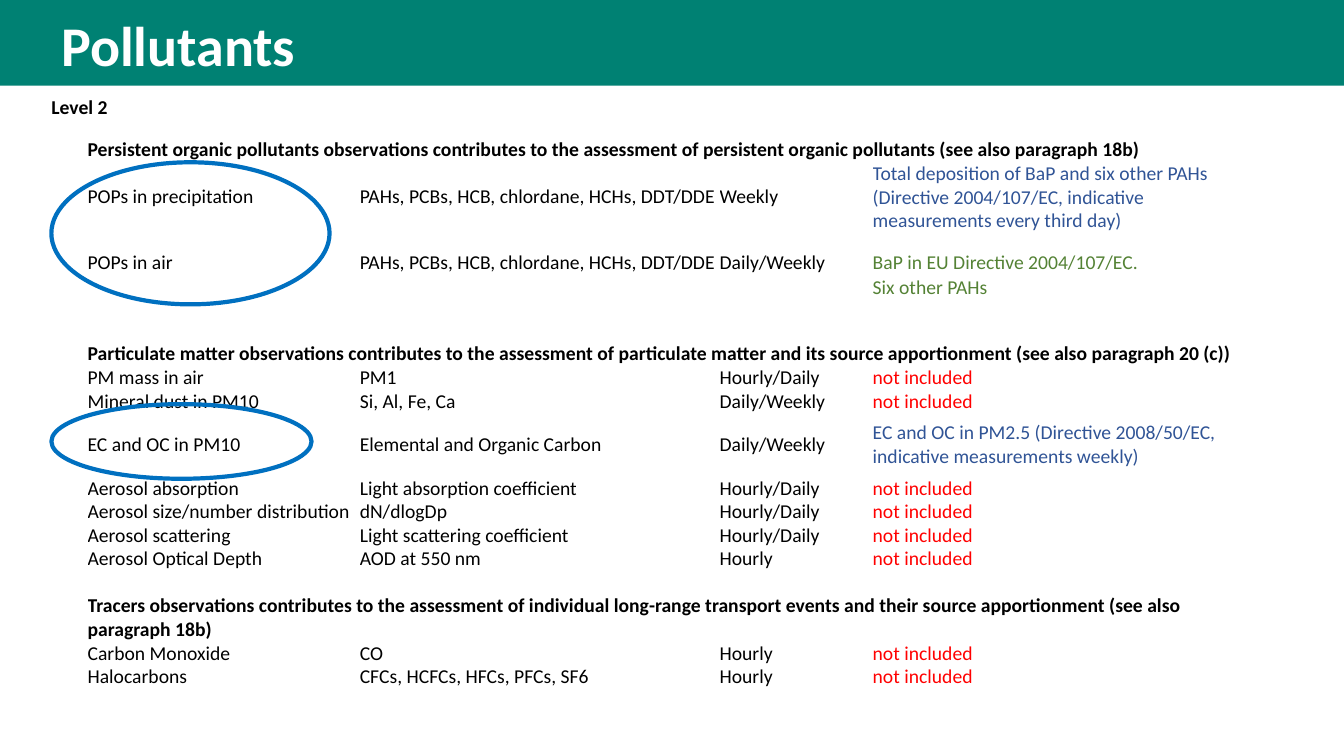
from pptx import Presentation
from pptx import util as u
from pptx.dml import color
from pptx.enum import shapes, text
from pptx.oxml import xmlchemy

Pt = u.Pt
TEAL = color.RGBColor(0x00, 0x81, 0x73)
WHITE = color.RGBColor(0xFF, 0xFF, 0xFF)
BLACK = color.RGBColor(0x00, 0x00, 0x00)
BLUE = color.RGBColor(0x30, 0x54, 0x96)
GREEN = color.RGBColor(0x54, 0x82, 0x35)
RED = color.RGBColor(0xFF, 0x00, 0x00)
RING = color.RGBColor(0x00, 0x70, 0xC0)
FONT = "Calibri"
BOTTOM = text.MSO_ANCHOR.BOTTOM
MIDDLE = text.MSO_ANCHOR.MIDDLE

TITLE = "Pollutants"
LEVEL = "Level 2"
POPS = "PAHs, PCBs, HCB, chlordane, HCHs, DDT/DDE"
MISSING = ("not included", RED)
BLANK = ("", "", "", ("", BLACK))

# END_PLACEHOLDER
ROWS = [
    (2, BOTTOM, "Persistent organic pollutants observations contributes to the assessment of "
                "persistent organic pollutants (see also paragraph 18b)"),
    (3, MIDDLE, ("POPs in precipitation", POPS, "Weekly",
                 ("Total deposition of BaP and six other PAHs (Directive 2004/107/EC, "
                  "indicative measurements every third day)", BLUE))),
    (2, BOTTOM, ("POPs in air", POPS, "Daily/Weekly",
                 ("BaP in EU Directive 2004/107/EC.", GREEN))),
    (1.2, BOTTOM, ("", "", "", ("Six other PAHs", GREEN))),
    (1, BOTTOM, BLANK),
    (2, BOTTOM, "Particulate matter observations contributes to the assessment of particulate "
                "matter and its source apportionment (see also paragraph 20 (c))"),
    (1, BOTTOM, ("PM mass in air", "PM1", "Hourly/Daily", MISSING)),
    (1, BOTTOM, ("Mineral dust in PM10", "Si, Al, Fe, Ca", "Daily/Weekly", MISSING)),
    (3, MIDDLE, ("EC and OC in PM10", "Elemental and Organic Carbon", "Daily/Weekly",
                 ("EC and OC in PM2.5 (Directive 2008/50/EC, indicative measurements weekly)",
                  BLUE))),
    (1, BOTTOM, ("Aerosol absorption", "Light absorption coefficient", "Hourly/Daily", MISSING)),
    (1, BOTTOM, ("Aerosol size/number distribution", "dN/dlogDp", "Hourly/Daily", MISSING)),
    (1, BOTTOM, ("Aerosol scattering", "Light scattering coefficient", "Hourly/Daily", MISSING)),
    (1, BOTTOM, ("Aerosol Optical Depth", "AOD at 550 nm", "Hourly", MISSING)),
    (1, BOTTOM, BLANK),
    (2, BOTTOM, "Tracers observations contributes to the assessment of individual long-range "
                "transport events and their source apportionment (see also paragraph 18b)"),
    (1, BOTTOM, ("Carbon Monoxide", "CO", "Hourly", MISSING)),
    (1, BOTTOM, ("Halocarbons", "CFCs, HCFCs, HFCs, PFCs, SF6", "Hourly", MISSING)),
]
COLUMNS = [25.9, 194.4, 257, 109.4, 272.2]
RINGS = [(115.9, 198.7, 101.5), (288.7, 185.8, 53.3)]
LEFT, TABLE_TOP, LINE, SIZE = 36.7, 68.4, 15.12, 14


def add_run(p, words, size, rgb, bold=False):
    r = p.add_run()
    r.text = words
    r.font.name, r.font.size, r.font.bold = FONT, Pt(size), bold
    r.font.color.rgb = rgb


def write(cell, words, rgb=BLACK, bold=False, anchor=BOTTOM):
    cell.vertical_anchor = anchor
    add_run(cell.text_frame.paragraphs[0], words, SIZE, rgb, bold)


def add_pollutant_table(s):
    frame = s.shapes.add_table(len(ROWS) + 1, len(COLUMNS), Pt(LEFT), Pt(TABLE_TOP),
                               Pt(sum(COLUMNS)), Pt(423.4))
    table = frame.table
    table.first_row = table.horz_banding = False
    for column, width in zip(table.columns, COLUMNS):
        column.width = Pt(width)
    table.rows[0].height = Pt(LINE)
    table.cell(0, 0).merge(table.cell(0, 1))
    write(table.cell(0, 0), LEVEL, bold=True)
    for i, (lines, anchor, content) in enumerate(ROWS, 1):
        table.rows[i].height = Pt(lines * LINE)
        if isinstance(content, str):
            table.cell(i, 1).merge(table.cell(i, 4))
            write(table.cell(i, 1), content, bold=True)
            continue
        *labels, (note, rgb) = content
        cells = [(words, BLACK) for words in labels] + [(note, rgb)]
        for j, (words, shade) in enumerate(cells, 1):
            if words:
                write(table.cell(i, j), words, shade, anchor=anchor)
    for cell in table.iter_cells():
        cell.fill.background()
        cell.margin_left = cell.margin_right = cell.margin_top = cell.margin_bottom = 0
        if not cell.text_frame.text:
            end = xmlchemy.OxmlElement("a:endParaRPr")
            end.set("sz", str(SIZE * 100))
            cell.text_frame.paragraphs[0]._p.append(end)


def main():
    prs = Presentation()
    prs.slide_width, prs.slide_height = Pt(960), Pt(540)
    s = prs.slides.add_slide(prs.slide_layouts[6])

    band = s.shapes.add_shape(shapes.MSO_SHAPE.RECTANGLE, 0, 0, Pt(960), Pt(61.2))
    band.shadow.inherit = False
    band.fill.solid()
    band.fill.fore_color.rgb = TEAL
    band.line.fill.background()

    tf = s.shapes.add_textbox(Pt(LEFT), Pt(2.9), Pt(885.6), Pt(53.3)).text_frame
    tf.word_wrap = True
    tf.margin_top = Pt(5)
    add_run(tf.paragraphs[0], TITLE, 40, WHITE, True)

    add_pollutant_table(s)

    for top, width, height in RINGS:
        sp = s.shapes.add_shape(shapes.MSO_SHAPE.OVAL, Pt(LEFT), Pt(top), Pt(width), Pt(height))
        sp.shadow.inherit = False
        sp.fill.background()
        sp.line.color.rgb = RING
        sp.line.width = Pt(3)

    prs.save("out.pptx")


if __name__ == "__main__":
    main()
